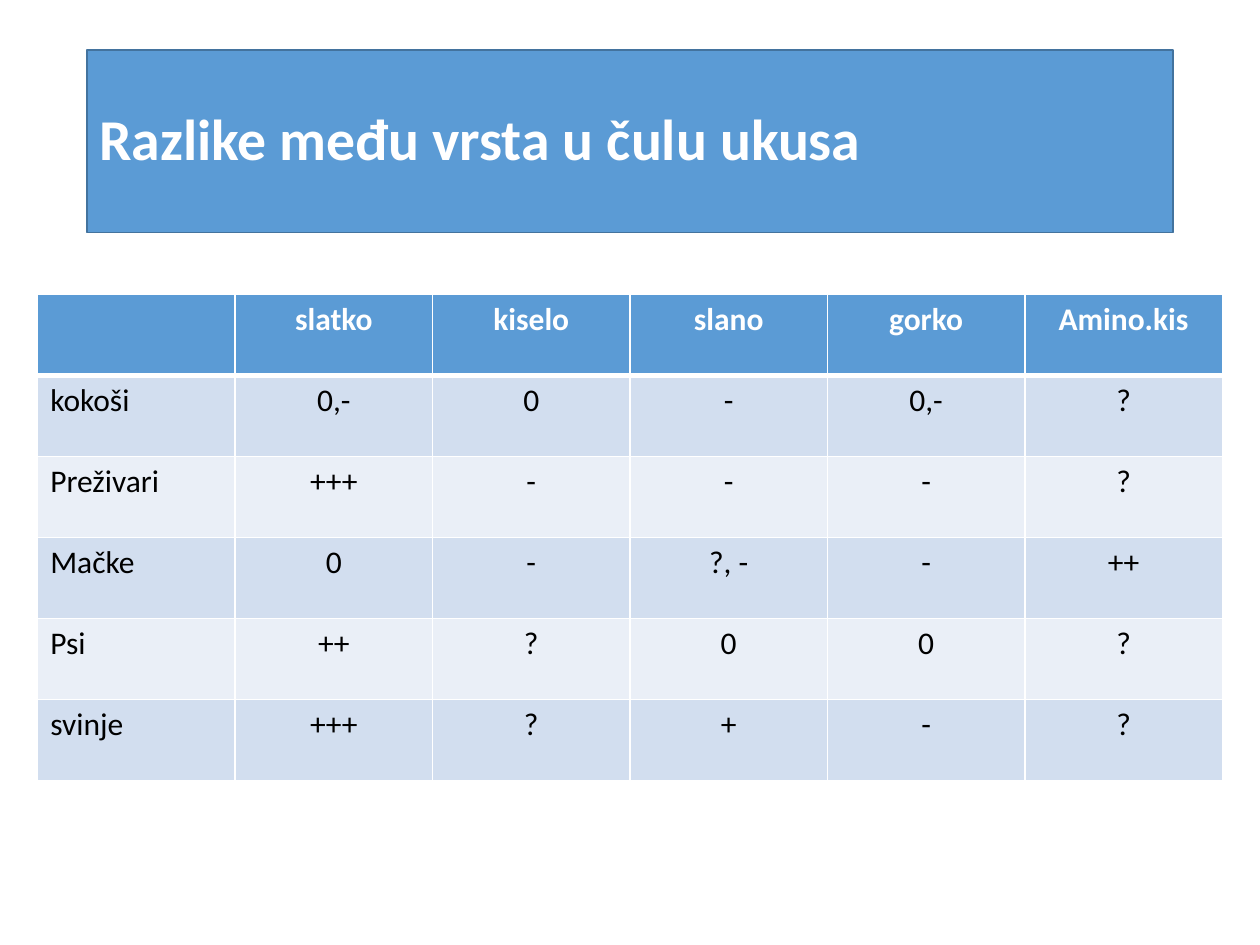
from dataclasses import dataclass

import pptx
import pptx.dml.color
import pptx.enum.shapes
import pptx.enum.text
import pptx.oxml.ns
import pptx.util
from lxml import etree
from pptx.util import Cm

RGBColor = pptx.dml.color.RGBColor
Align = pptx.enum.text.PP_ALIGN

WHITE = RGBColor(0xFF, 0xFF, 0xFF)
BLACK = RGBColor(0x00, 0x00, 0x00)
BLUE = RGBColor(0x5B, 0x9B, 0xD5)
DARK_BLUE = RGBColor(0x43, 0x73, 0x9E)
BAND_DARK = RGBColor(0xD2, 0xDE, 0xEF)
BAND_LIGHT = RGBColor(0xEA, 0xEF, 0xF7)

FONT = "Calibri"
COLUMN_WIDTH = Cm(3.98)
ROW_HEIGHT = Cm(1.634)
THIN, THICK = 1, 3


@dataclass(frozen=True)
class Species:
    name: str
    responses: tuple[str, ...]


TASTES = ("slatko", "kiselo", "slano", "gorko", "Amino.kis")
SPECIES = (
    Species("kokoši", ("0,-", "0", "-", "0,-", "?")),
    Species("Preživari", ("+++", "-", "-", "-", "?")),
    Species("Mačke", ("0", "-", "?, -", "-", "++")),
    Species("Psi", ("++", "?", "0", "0", "?")),
    Species("svinje", ("+++", "?", "+", "-", "?")),
)


def add_text(paragraph, text: str, size: float, color: RGBColor, bold: bool) -> None:
    run = paragraph.add_run()
    run.text = text
    run.font.name = FONT
    run.font.size = pptx.util.Pt(size)
    run.font.bold = bold
    run.font.color.rgb = color


def add_borders(cell, top: int, bottom: int) -> None:
    """Draw white cell borders; must run before the cell's fill is set."""
    properties = cell._tc.get_or_add_tcPr()
    qn = pptx.oxml.ns.qn
    for side, points in (("L", THIN), ("R", THIN), ("T", top), ("B", bottom)):
        line = etree.SubElement(properties, qn(f"a:ln{side}"), w=str(pptx.util.Pt(points)))
        fill = etree.SubElement(line, qn("a:solidFill"))
        etree.SubElement(fill, qn("a:srgbClr"), val=str(WHITE))


def add_title(slide, text: str) -> None:
    banner = slide.shapes.add_shape(
        pptx.enum.shapes.MSO_SHAPE.RECTANGLE, Cm(1.75), Cm(1.01), Cm(21.9), Cm(3.68))
    banner.shadow.inherit = False
    banner.fill.solid()
    banner.fill.fore_color.rgb = BLUE
    banner.line.color.rgb = DARK_BLUE
    banner.line.width = pptx.util.Pt(1)
    frame = banner.text_frame
    frame.word_wrap = True
    frame.vertical_anchor = pptx.enum.text.MSO_ANCHOR.MIDDLE
    paragraph = frame.paragraphs[0]
    paragraph.alignment = Align.LEFT
    paragraph.line_spacing = 0.9
    add_text(paragraph, text, 33, WHITE, True)


def add_taste_table(slide) -> None:
    rows = [("", *TASTES)] + [(s.name, *s.responses) for s in SPECIES]
    row_count, column_count = len(rows), len(rows[0])
    table = slide.shapes.add_table(
        row_count, column_count, Cm(0.76), Cm(5.93),
        COLUMN_WIDTH * column_count, ROW_HEIGHT * row_count).table
    for column in table.columns:
        column.width = COLUMN_WIDTH
    for r, texts in enumerate(rows):
        table.rows[r].height = ROW_HEIGHT
        header = r == 0
        background = BLUE if header else BAND_DARK if r % 2 else BAND_LIGHT
        for c, text in enumerate(texts):
            cell = table.cell(r, c)
            add_borders(cell, THICK if r == 1 else THIN, THICK if header else THIN)
            cell.fill.solid()
            cell.fill.fore_color.rgb = background
            if text:
                paragraph = cell.text_frame.paragraphs[0]
                paragraph.alignment = Align.CENTER if c else Align.LEFT
                add_text(paragraph, text, 18, WHITE if header else BLACK, header)


def main() -> None:
    presentation = pptx.Presentation()
    presentation.slide_width = Cm(25.4)
    presentation.slide_height = Cm(19.05)
    slide = presentation.slides.add_slide(presentation.slide_layouts[6])
    add_title(slide, "Razlike među vrsta u čulu ukusa")
    add_taste_table(slide)
    presentation.save("out.pptx")


if __name__ == "__main__":
    main()
